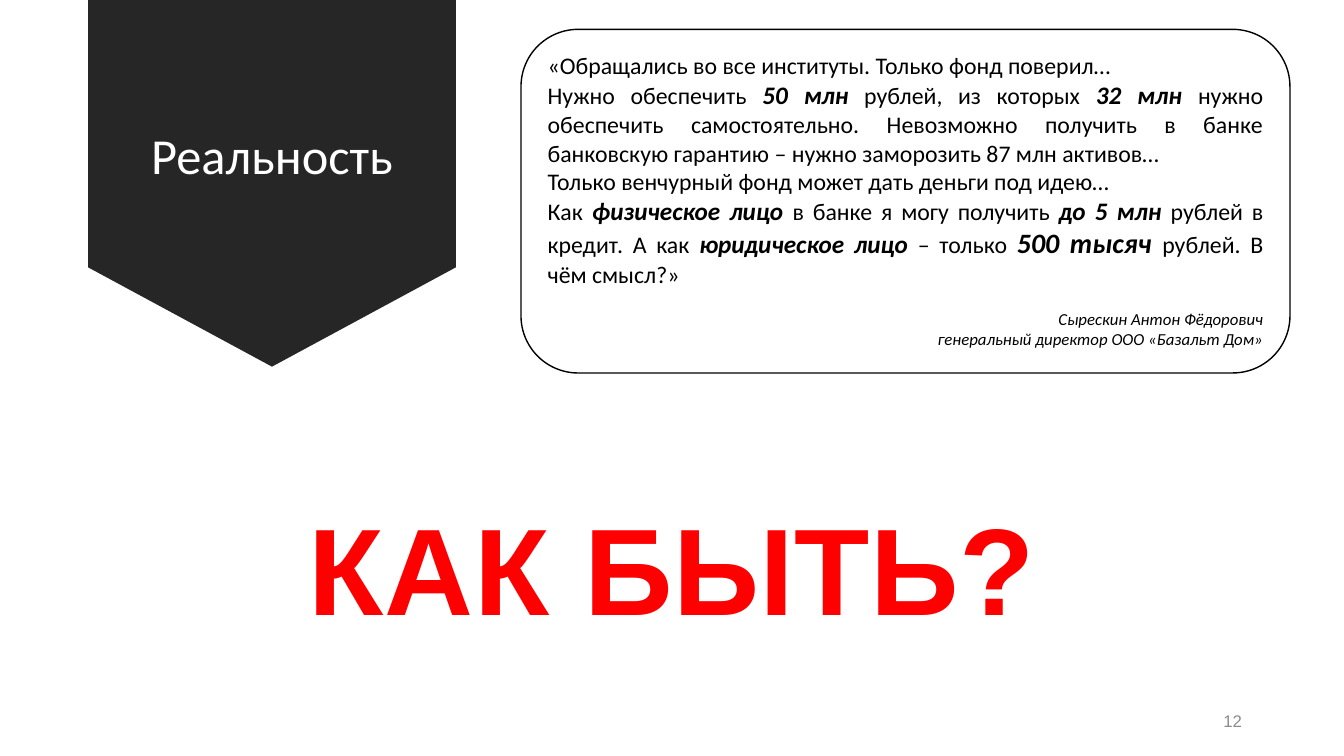
from pptx import Presentation
from pptx.dml.color import RGBColor
from pptx.enum.shapes import MSO_SHAPE
from pptx.enum.text import MSO_ANCHOR, PP_ALIGN
from pptx.util import Cm, Pt

BLACK = RGBColor(0, 0, 0)
WHITE = RGBColor(255, 255, 255)
DARK = RGBColor(0x26, 0x26, 0x26)
GRAY = RGBColor(0x8C, 0x8C, 0x8C)
RED = RGBColor(255, 0, 0)

TITLE = "Реальность"
CALL = "КАК БЫТЬ?"
PAGE = "12"

# Each paragraph is a list of runs; a tuple is a stressed run with its size.
QUOTE = [
    ["«Обращались во все институты. Только фонд поверил…"],
    ["Нужно обеспечить ", ("50 млн", 18), " рублей, из которых ",
     ("32 млн ", 18), "нужно обеспечить самостоятельно. Невозможно получить "
     "в банке банковскую гарантию – нужно заморозить 87 млн активов…"],
    ["Только венчурный фонд может дать деньги под идею…"],
    ["Как ", ("физическое лицо ", 18), "в банке я могу получить ",
     ("до 5 млн ", 18), "рублей в кредит. А как ",
     ("юридическое лицо ", 18), "– только ", ("500 тысяч ", 20),
     "рублей. В чём смысл?»"],
]
AUTHOR = ["Сырескин Антон Фёдорович",
          "генеральный директор ООО «Базальт Дом»"]

# Left, top, width, height in centimetres
ARROW_AT = (2.22, -0.03, 9.27, 9.27)
TITLE_AT = (2.84, 0.53, 8.03, 6.91)
QUOTE_AT = (13.13, 0.74, 19.38, 8.66)
CALL_AT = (7.42, 12.27, 19.05, 4.01)
PAGE_AT = (23.93, 17.65, 7.62, 1.02)


def box(at):
    return [Cm(v) for v in at]


def write(para, text, size, color=BLACK, font="Calibri", bold=False,
          italic=False, align=None):
    run = para.add_run()
    run.text = text
    run.font.size = Pt(size)
    run.font.name = font
    run.font.bold = bold
    run.font.italic = italic
    run.font.color.rgb = color
    if align is not None:
        para.alignment = align
    return run


def add_shape(slide, kind, at, fill, line=None):
    shape = slide.shapes.add_shape(kind, *box(at))
    shape.shadow.inherit = False
    shape.fill.solid()
    shape.fill.fore_color.rgb = fill
    if line is None:
        shape.line.fill.background()
    else:
        shape.line.color.rgb = line
        shape.line.width = Pt(1)
    return shape


def add_title(slide):
    arrow = add_shape(slide, MSO_SHAPE.DOWN_ARROW, ARROW_AT, DARK)
    arrow.adjustments[0] = 1
    arrow.adjustments[1] = 0.27
    title = slide.shapes.title
    title._element.addprevious(arrow._element)
    title.left, title.top, title.width, title.height = box(TITLE_AT)
    frame = title.text_frame
    frame.vertical_anchor = MSO_ANCHOR.MIDDLE
    para = frame.paragraphs[0]
    para.line_spacing = 0.9
    write(para, TITLE, 36, WHITE, align=PP_ALIGN.CENTER)


def add_quote(slide):
    card = add_shape(slide, MSO_SHAPE.ROUNDED_RECTANGLE, QUOTE_AT, WHITE, BLACK)
    frame = card.text_frame
    frame.word_wrap = True
    frame.vertical_anchor = MSO_ANCHOR.TOP
    for i, runs in enumerate(QUOTE):
        para = frame.add_paragraph() if i else frame.paragraphs[0]
        para.alignment = PP_ALIGN.JUSTIFY
        for part in runs:
            if isinstance(part, tuple):
                write(para, *part, bold=True, italic=True)
            else:
                write(para, part, 17)
    for i, text in enumerate(AUTHOR):
        para = frame.add_paragraph()
        para.space_before = Pt(0 if i else 14.5)
        write(para, text, 12, italic=True, align=PP_ALIGN.RIGHT)


def add_text(slide, at, text, size, wrap=True, anchor=MSO_ANCHOR.TOP, **style):
    frame = slide.shapes.add_textbox(*box(at)).text_frame
    frame.word_wrap = wrap
    frame.vertical_anchor = anchor
    return write(frame.paragraphs[0], text, size, font="Arial", **style)


def main():
    deck = Presentation()
    deck.slide_width, deck.slide_height = Cm(33.87), Cm(19.05)
    slide = deck.slides.add_slide(deck.slide_layouts[5])
    add_title(slide)
    add_text(slide, PAGE_AT, PAGE, 12, anchor=MSO_ANCHOR.MIDDLE,
             color=GRAY, align=PP_ALIGN.RIGHT)
    add_quote(slide)
    call = add_text(slide, CALL_AT, CALL, 88, wrap=False, color=RED,
                    bold=True, align=PP_ALIGN.CENTER)
    call.font._element.set("spc", "50")
    deck.save("out.pptx")


if __name__ == "__main__":
    main()
